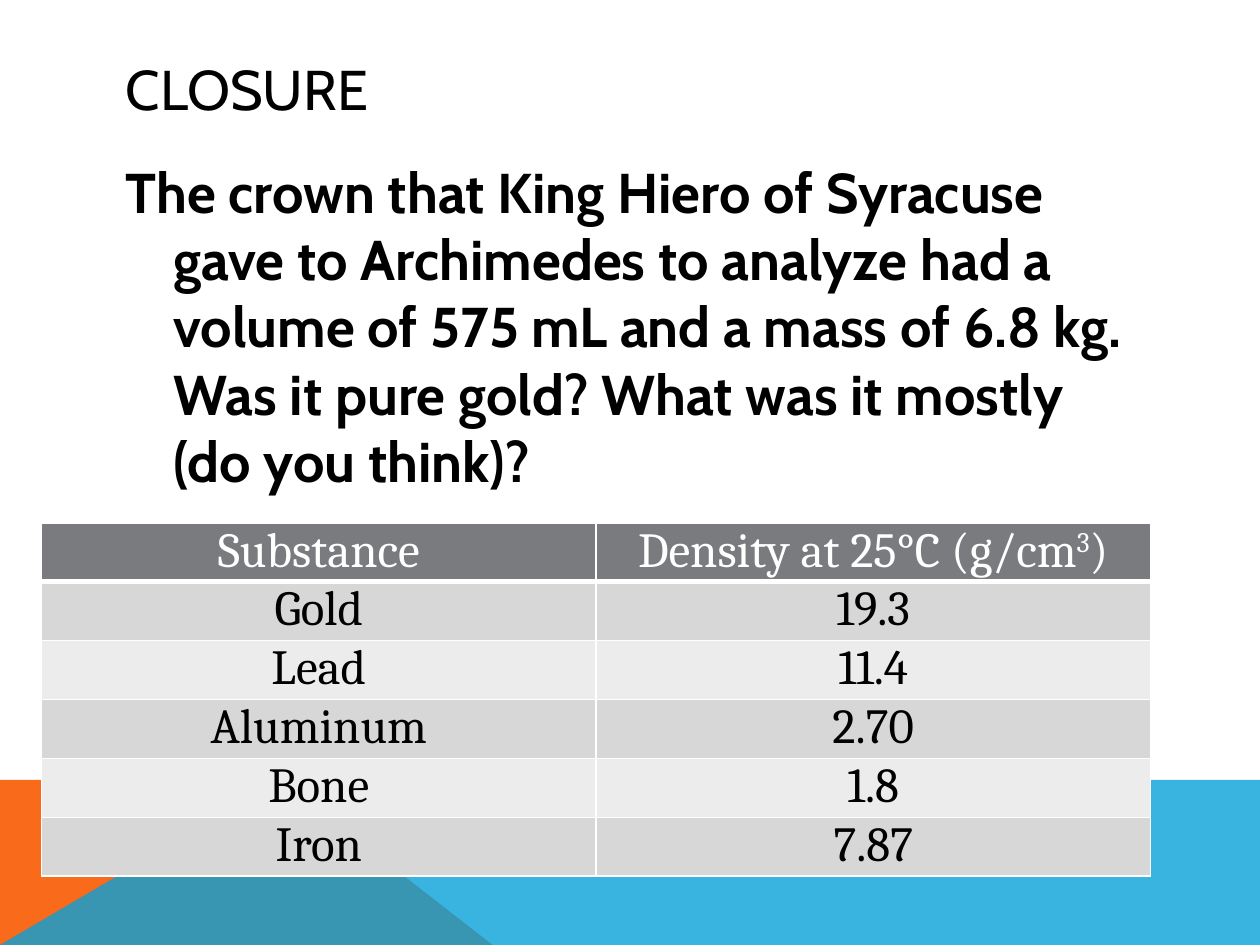
import pptx
import pptx.dml.color
import pptx.enum.text
import pptx.oxml
import pptx.oxml.ns
import pptx.util
from lxml import etree

WIDTH, HEIGHT = 10, 7.5
MARGIN, TEXT_WIDTH = 0.9, 8.22
BAND_TOP, BAND_PEAK = 6.19, 2.23
QUESTION = (
    "The crown that King Hiero of Syracuse gave to Archimedes to analyze had a "
    "volume of 575 mL and a mass of 6.8 kg. Was it pure gold? What was it mostly "
    "(do you think)?"
)
DENSITIES = [
    ("Substance", "Density at 25°C (g/cm^3^)"),
    ("Gold", "19.3"),
    ("Lead", "11.4"),
    ("Aluminum", "2.70"),
    ("Bone", "1.8"),
    ("Iron", "7.87"),
]


def inches(*lengths):
    """Convert lengths in inches to slide units."""
    return [pptx.util.Inches(length) for length in lengths]


def paint(fill, colour):
    """Make a fill solid in a hex colour."""
    fill.solid()
    fill.fore_color.rgb = pptx.dml.color.RGBColor.from_string(colour)


def add_run(paragraph, text, font, size, colour, bold=False):
    """Append one formatted run to a paragraph."""
    run = paragraph.add_run()
    run.text = text
    run.font.name = font
    run.font.size = pptx.util.Pt(size)
    run.font.bold = bold
    paint(run.font.fill, colour)
    return run


def add_band(slide, points, colour, opacity=100):
    """Draw a closed flat polygon of the footer."""
    corners = [tuple(inches(*point)) for point in points]
    builder = slide.shapes.build_freeform(*corners[0], scale=1.0)
    builder.add_line_segments(corners[1:], close=True)
    shape = builder.convert_to_shape()
    shape.shadow.inherit = False
    shape.line.fill.background()
    paint(shape.fill, colour)
    if opacity < 100:
        tint = shape.fill._xPr.find(".//" + pptx.oxml.ns.qn("a:srgbClr"))
        etree.SubElement(tint, pptx.oxml.ns.qn("a:alpha"), val=str(opacity * 1000))


def add_text(slide, top, height, text, bold=False, middle=False, hanging=0, before=0):
    """Place a paragraph of body-size text in the main column."""
    box = slide.shapes.add_textbox(*inches(MARGIN, top, TEXT_WIDTH, height))
    frame = box.text_frame
    frame.word_wrap = True
    if middle:
        frame.vertical_anchor = pptx.enum.text.MSO_ANCHOR.MIDDLE
    paragraph = frame.paragraphs[0]
    paragraph.space_before = pptx.util.Pt(before)
    if hanging:
        indent = pptx.util.Inches(hanging)
        properties = paragraph._p.get_or_add_pPr()
        properties.set("marL", str(indent))
        properties.set("indent", str(-indent))
    add_run(paragraph, text, "Cabin", 32, "000000", bold)


def set_borders(cell, bottom):
    """Give a cell white borders with the given bottom width in points."""
    properties = cell._tc.get_or_add_tcPr()
    widths = {"lnL": 1, "lnR": 1, "lnT": 1, "lnB": bottom}
    for position, (side, width) in enumerate(widths.items()):
        border = pptx.oxml.parse_xml(
            f'<a:{side} {pptx.oxml.ns.nsdecls("a")} w="{pptx.util.Pt(width)}">'
            f'<a:solidFill><a:srgbClr val="FFFFFF"/></a:solidFill></a:{side}>'
        )
        properties.insert(position, border)


def fill_cell(cell, text, background, colour, bottom):
    """Write centred cell text, raising the parts between carets."""
    cell.margin_left = cell.margin_right = pptx.util.Inches(0.07)
    cell.margin_top = cell.margin_bottom = 0
    paint(cell.fill, background)
    set_borders(cell, bottom)
    paragraph = cell.text_frame.paragraphs[0]
    paragraph.alignment = pptx.enum.text.PP_ALIGN.CENTER
    for index, part in enumerate(text.split("^")):
        run = add_run(paragraph, part, "Cambria", 28, colour)
        if index % 2:
            run._r.get_or_add_rPr().set("baseline", "30000")


def add_density_table(slide, left, top, column_width, row_height):
    """Add the banded table of densities."""
    rows, columns = len(DENSITIES), len(DENSITIES[0])
    size = inches(left, top, columns * column_width, rows * row_height)
    table = slide.shapes.add_table(rows, columns, *size).table
    for row, values in enumerate(DENSITIES):
        if row == 0:
            style = "797B7E", "FFFFFF", 3
        else:
            style = "D7D7D8" if row % 2 else "ECECEC", "000000", 1
        for column, text in enumerate(values):
            fill_cell(table.cell(row, column), text, *style)


def main():
    """Build and save the closure slide."""
    presentation = pptx.Presentation()
    presentation.slide_width, presentation.slide_height = inches(WIDTH, HEIGHT)
    slide = presentation.slides.add_slide(presentation.slide_layouts[6])
    peak = (BAND_PEAK, BAND_TOP)
    add_band(slide, [(0, HEIGHT), (0, BAND_TOP), peak, (3.91, HEIGHT)], "F96A1B")
    blue = [(0, HEIGHT), peak, (WIDTH, BAND_TOP), (WIDTH, HEIGHT)]
    add_band(slide, blue, "08A1D9", opacity=80)
    add_text(slide, 0.4, 0.6, "CLOSURE", middle=True)
    add_text(slide, 1.2, 4.74, QUESTION, bold=True, hanging=0.38, before=8)
    add_density_table(slide, 0.33, 4.15, column_width=4.4, row_height=0.41)
    presentation.save("out.pptx")


if __name__ == "__main__":
    main()
